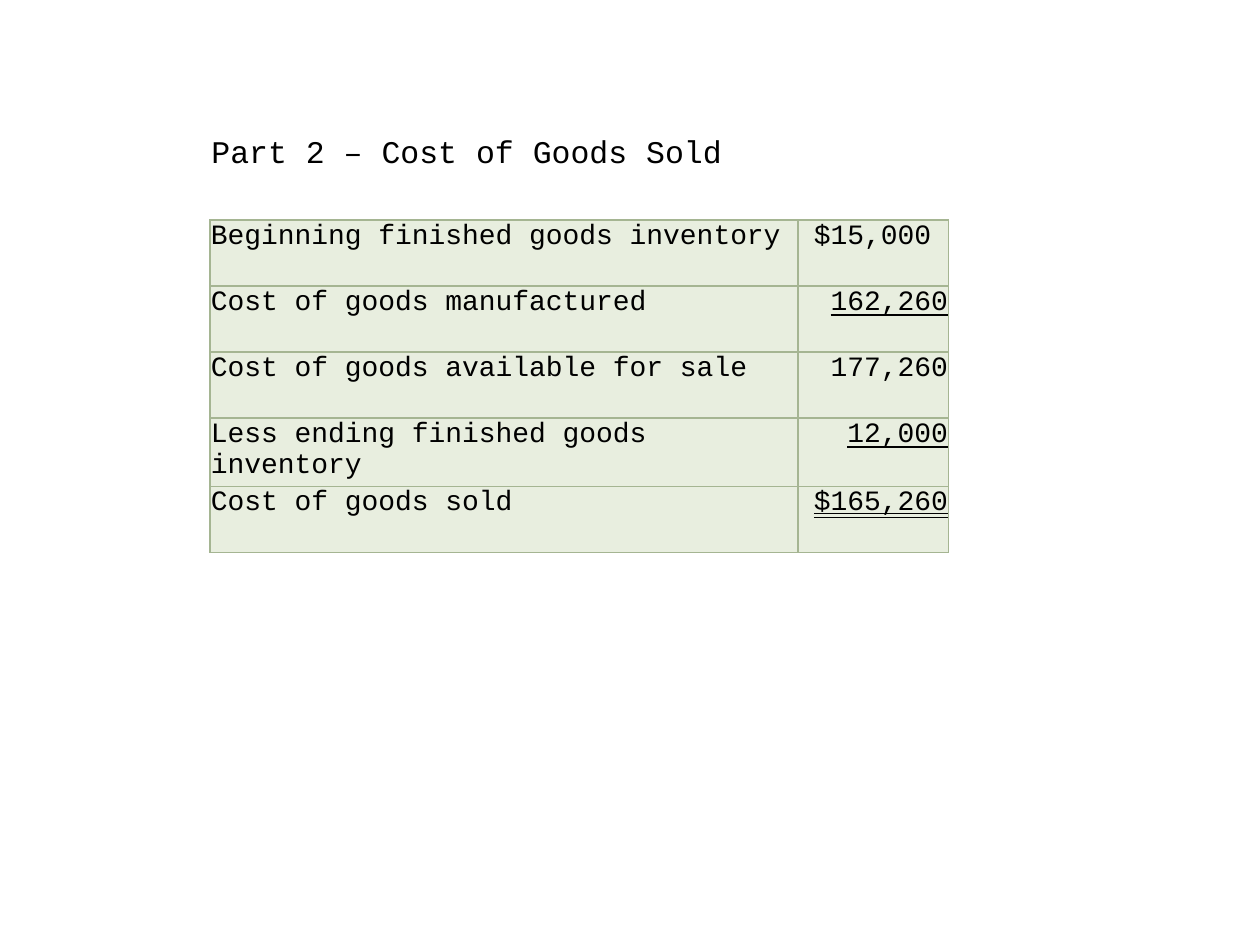
from lxml import etree
from pptx import Presentation
from pptx.dml.color import RGBColor
from pptx.enum.text import MSO_AUTO_SIZE, MSO_TEXT_UNDERLINE_TYPE, PP_ALIGN
from pptx.oxml.ns import qn
from pptx.util import Pt

SINGLE = MSO_TEXT_UNDERLINE_TYPE.SINGLE_LINE
DOUBLE = MSO_TEXT_UNDERLINE_TYPE.DOUBLE_LINE
LEFT, RIGHT = PP_ALIGN.LEFT, PP_ALIGN.RIGHT
FIT_SHAPE = MSO_AUTO_SIZE.SHAPE_TO_FIT_TEXT

TITLE = "Part 2 – Cost of Goods Sold"
COST_ROWS = [
    ("Beginning finished goods inventory", "$15,000 ", None),
    ("Cost of goods manufactured", "162,260", SINGLE),
    ("Cost of goods available for sale", "177,260", None),
    ("Less ending finished goods inventory", "12,000", SINGLE),
    ("Cost of goods sold", "$165,260 ", DOUBLE),
]
COLORS = {"text": "000000", "cell": "E8EEDF", "border": "A5B592"}
FONT = "Courier New"
COLUMN_WIDTHS = (588, 151)
ROW_HEIGHT = 66
EMU_PER_PX = 914400 / 126


def px(length):
    return round(length * EMU_PER_PX)


def add_text(paragraph, text, size, alignment=LEFT, underline=None):
    paragraph.alignment = alignment
    run = paragraph.add_run()
    run.text = text
    run.font.name = FONT
    run.font.size = Pt(size)
    run.font.color.rgb = RGBColor.from_string(COLORS["text"])
    run.font.underline = underline


def add_borders(cell):
    properties = cell._tc.get_or_add_tcPr()
    for index, side in enumerate(("a:lnL", "a:lnR", "a:lnT", "a:lnB")):
        line = etree.Element(qn(side), w=str(Pt(0.75)))
        fill = etree.SubElement(line, qn("a:solidFill"))
        etree.SubElement(fill, qn("a:srgbClr"), val=COLORS["border"])
        properties.insert(index, line)


def fill_cell(cell, text, alignment, underline):
    cell.margin_left = cell.margin_right = cell.margin_top = px(1)
    cell.margin_bottom = 0
    cell.fill.solid()
    cell.fill.fore_color.rgb = RGBColor.from_string(COLORS["cell"])
    add_borders(cell)
    add_text(cell.text_frame.paragraphs[0], text, 16, alignment, underline)


def add_title(slide):
    title_box = slide.shapes.add_textbox(px(199), px(126), px(851), px(51))
    title_box.text_frame.word_wrap = True
    title_box.text_frame.auto_size = FIT_SHAPE
    add_text(title_box.text_frame.paragraphs[0], TITLE, 18)


def add_cost_table(slide):
    table = slide.shapes.add_table(
        len(COST_ROWS), len(COLUMN_WIDTHS), px(210), px(220),
        px(sum(COLUMN_WIDTHS)), px(ROW_HEIGHT * len(COST_ROWS)),
    ).table
    table.first_row = table.horz_banding = False
    for column, width in zip(table.columns, COLUMN_WIDTHS):
        column.width = px(width)
    for row, (label, amount, underline) in zip(table.rows, COST_ROWS):
        row.height = px(ROW_HEIGHT)
        fill_cell(row.cells[0], label, LEFT, None)
        fill_cell(row.cells[1], amount, RIGHT, underline)


def main():
    presentation = Presentation()
    presentation.slide_width = px(1260)
    presentation.slide_height = px(945)
    slide = presentation.slides.add_slide(presentation.slide_layouts[6])
    add_title(slide)
    add_cost_table(slide)
    presentation.save("out.pptx")


if __name__ == "__main__":
    main()
